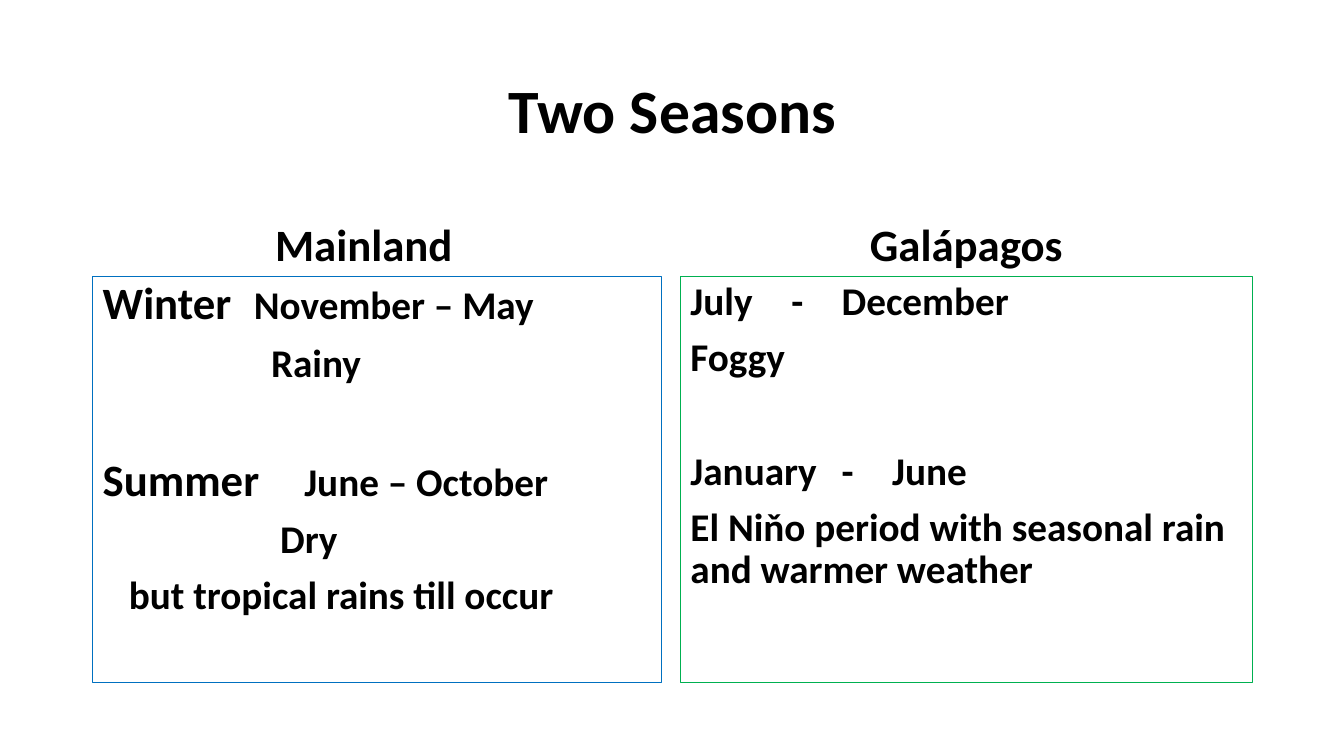
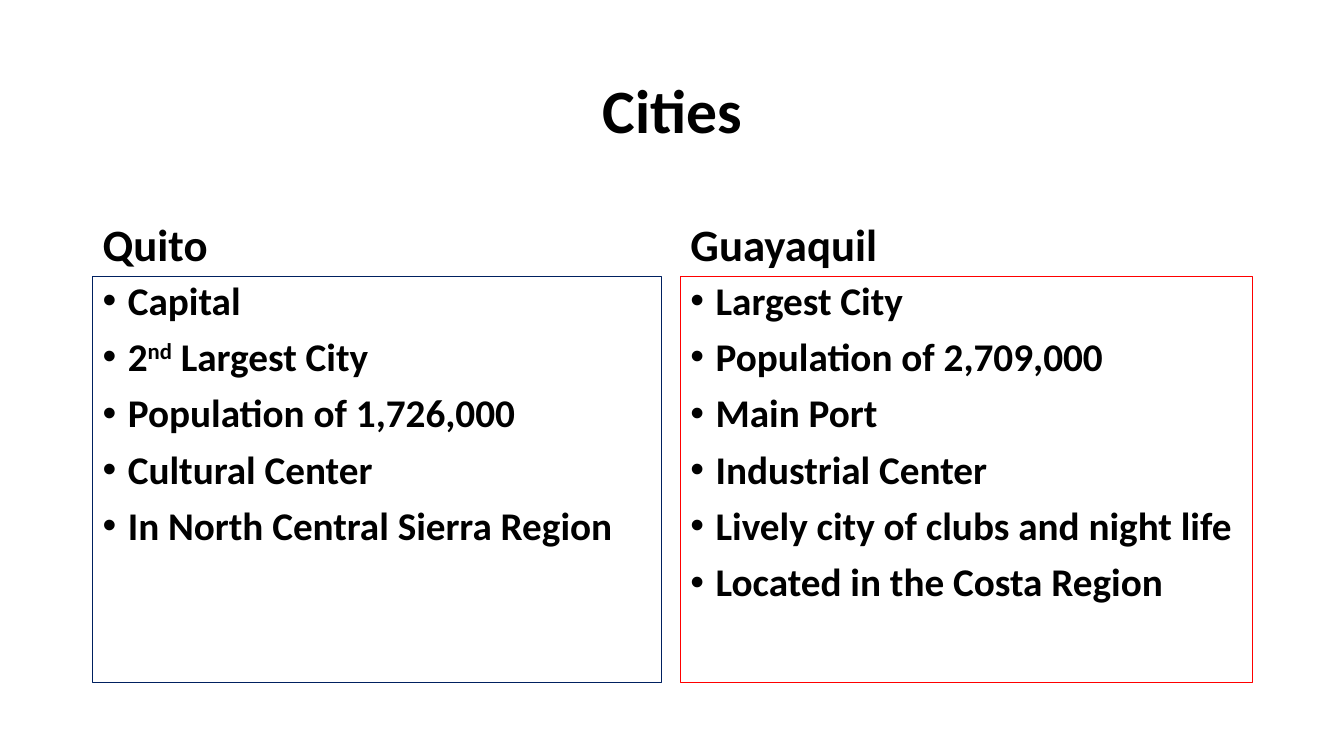
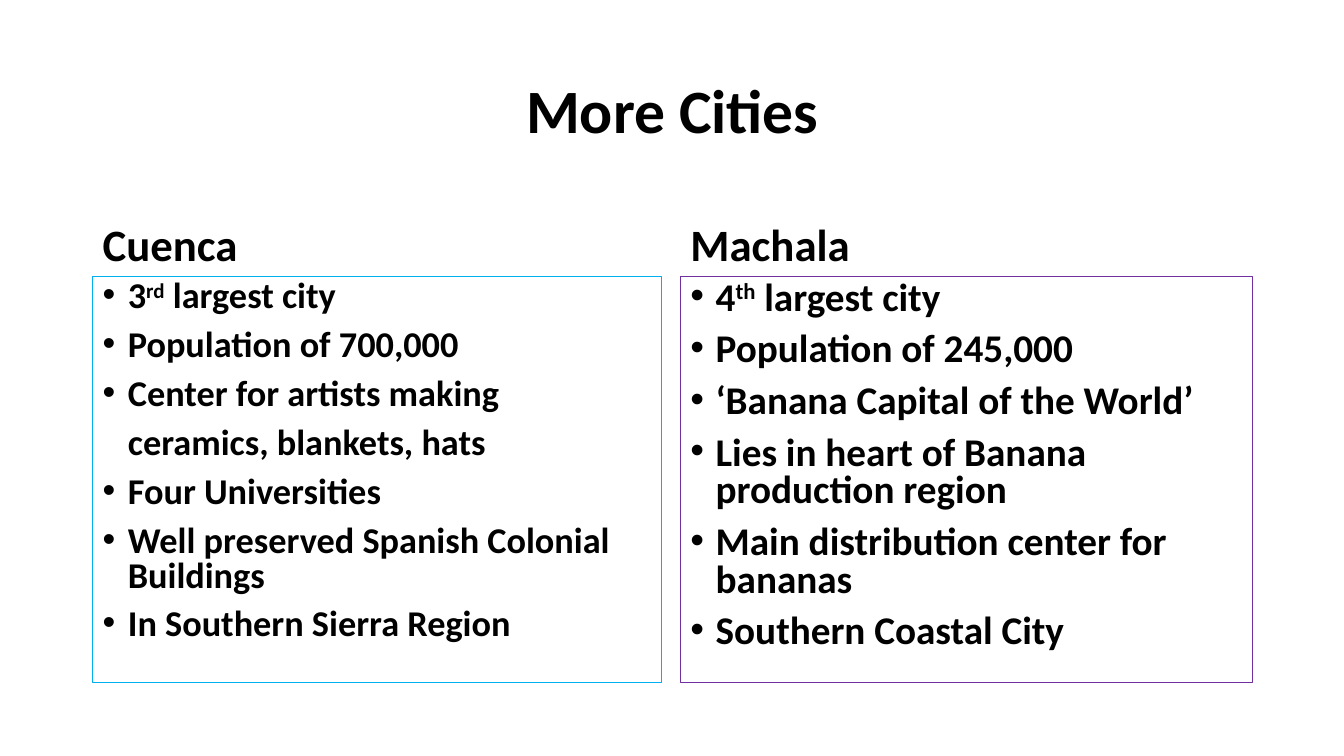
"""Build three two-column slides on the seasons and cities of Ecuador."""
from dataclasses import dataclass
from typing import Any

from lxml import etree
from pptx import Presentation
from pptx import util as u
from pptx.dml import color
from pptx.enum import shapes, text
from pptx.oxml import ns

HUES = {
    "ink": "000000", "blue": "0070C0", "green": "00B050", "navy": "002060",
    "red": "FF0000", "sky": "00B0F0", "plum": "7030A0",
}
FACE = "Calibri"
TITLE, HEAD, BODY = 44, 32, 28
GAP = 10
SKIP = 51
HANG = 0.25
LEFT, RIGHT = (0.92, 5.64), (6.75, 5.67)
INSET = 0.1


@dataclass(frozen=True)
class Line:
    text: str
    lead: str = ""
    indent: float = 0
    tabs: tuple[float, ...] = ()
    gap: float = GAP
    dot: bool = False


@dataclass(frozen=True)
class Panel:
    head: str
    hue: str
    lines: list[Line]
    size: float = BODY
    pitch: float = 0.9
    mid: bool = False
    inset: float = INSET


@dataclass(frozen=True)
class Page:
    title: str
    left: Panel
    right: Panel


def rgb(hue: str) -> color.RGBColor:
    """Return a named colour."""
    return color.RGBColor.from_string(HUES[hue])


def apply(item: Any, form: dict[str, Any]) -> None:
    """Set each format value on an object."""
    for name, value in form.items():
        setattr(item, name, value)


def add_run(para: Any, words: str, size: float, raised: bool = False) -> None:
    """Add a bold run, raised for ordinal endings."""
    run = para.add_run()
    run.text = words
    apply(run.font, {"name": FACE, "size": u.Pt(size), "bold": True})
    run.font.color.rgb = rgb("ink")
    if raised:
        run.font._element.set("baseline", "30000")


def set_frame(frame: Any, anchor: Any, inset: float = INSET) -> None:
    """Fix the wrapping, anchor and insets of a text frame."""
    apply(frame, {
        "word_wrap": True, "auto_size": text.MSO_AUTO_SIZE.NONE,
        "vertical_anchor": anchor,
        "margin_left": u.Inches(INSET), "margin_right": u.Inches(inset),
        "margin_top": u.Inches(0.05), "margin_bottom": u.Inches(0.05),
    })


def add_marks(para: Any, line: Line) -> None:
    """Set the indent, bullet and tab stops of a paragraph."""
    props = para._p.get_or_add_pPr()
    hang = HANG if line.dot else 0
    props.set("marL", str(u.Inches(line.indent + hang)))
    props.set("indent", str(u.Inches(-hang)))
    if line.dot:
        font = etree.SubElement(props, ns.qn("a:buFont"))
        font.set("typeface", "Arial")
        etree.SubElement(props, ns.qn("a:buChar")).set("char", "•")
    else:
        etree.SubElement(props, ns.qn("a:buNone"))
    if line.tabs:
        stops = etree.SubElement(props, ns.qn("a:tabLst"))
        for pos in line.tabs:
            stop = etree.SubElement(stops, ns.qn("a:tab"))
            stop.set("pos", str(u.Inches(pos)))
            stop.set("algn", "l")


def add_line(para: Any, line: Line, panel: Panel, first: bool) -> None:
    """Write one line, with text between carets raised."""
    add_marks(para, line)
    apply(para, {
        "alignment": text.PP_ALIGN.LEFT, "line_spacing": panel.pitch,
        "space_before": u.Pt(0 if first else line.gap),
    })
    if line.lead:
        add_run(para, line.lead, HEAD)
    for i, part in enumerate(line.text.split("^")):
        add_run(para, part, panel.size, raised=i % 2 == 1)


def add_panel(slide: Any, panel: Panel, span: tuple[float, float]) -> None:
    """Draw a heading over an outlined box of lines."""
    left, width = map(u.Inches, span)
    head = slide.shapes.add_textbox(left, u.Inches(1.84), width, u.Inches(0.9))
    set_frame(head.text_frame, text.MSO_ANCHOR.BOTTOM, panel.inset)
    para = head.text_frame.paragraphs[0]
    align = text.PP_ALIGN.CENTER if panel.mid else text.PP_ALIGN.LEFT
    apply(para, {"alignment": align, "line_spacing": 0.9})
    add_run(para, panel.head, HEAD)

    box = slide.shapes.add_shape(
        shapes.MSO_SHAPE.RECTANGLE, left, u.Inches(2.74), width, u.Inches(4.03))
    box.shadow.inherit = False
    box.fill.background()
    box.line.color.rgb = rgb(panel.hue)
    box.line.width = u.Pt(0.75)
    frame = box.text_frame
    set_frame(frame, text.MSO_ANCHOR.TOP)
    for i, line in enumerate(panel.lines):
        para = frame.add_paragraph() if i else frame.paragraphs[0]
        add_line(para, line, panel, first=i == 0)


def add_page(deck: Any, page: Page) -> None:
    """Add a titled slide with two panels."""
    slide = deck.slides.add_slide(deck.slide_layouts[5])
    title = slide.shapes.title
    apply(title, {
        "left": u.Inches(0.92), "top": u.Inches(0.4),
        "width": u.Inches(11.5), "height": u.Inches(1.45),
    })
    set_frame(title.text_frame, text.MSO_ANCHOR.MIDDLE)
    para = title.text_frame.paragraphs[0]
    apply(para, {"alignment": text.PP_ALIGN.CENTER, "line_spacing": 0.9})
    add_run(para, page.title, TITLE)
    add_panel(slide, page.left, LEFT)
    add_panel(slide, page.right, RIGHT)


def dots(*items: str) -> list[Line]:
    """Make bulleted lines."""
    return [Line(item, dot=True) for item in items]


PAGES = [
    Page(
        "Two Seasons",
        Panel("Mainland", "blue", [
            Line("\tNovember – May", lead="Winter", tabs=(1.9,)),
            Line("Rainy", indent=1.67),
            Line("\tJune – October", lead="Summer", tabs=(1.9,), gap=SKIP),
            Line("Dry", indent=1.76),
            Line("but tropical rains till occur", indent=0.26),
        ], mid=True, inset=0.36),
        Panel("Galápagos", "green", [
            Line("July\t-\tDecember", tabs=(0.79, 1.09)),
            Line("Foggy"),
            Line("January\t-\tJune", tabs=(1.43, 1.72), gap=SKIP),
            Line("El Niňo period with seasonal rain and warmer weather"),
        ], mid=True),
    ),
    Page(
        "Cities",
        Panel("Quito", "navy", dots(
            "Capital", "2^nd^ Largest City", "Population of 1,726,000",
            "Cultural Center", "In North Central Sierra Region")),
        Panel("Guayaquil", "red", dots(
            "Largest City", "Population of 2,709,000", "Main Port",
            "Industrial Center", "Lively city of clubs and night life",
            "Located in the Costa Region")),
    ),
    Page(
        "More Cities",
        Panel("Cuenca", "sky", [
            *dots("3^rd^ largest city", "Population of 700,000",
                  "Center for artists making"),
            Line("ceramics, blankets, hats", indent=HANG),
            *dots("Four Universities",
                  "Well preserved Spanish Colonial Buildings",
                  "In Southern Sierra Region"),
        ], size=25.9, pitch=0.8),
        Panel("Machala", "plum", dots(
            "4^th^ largest city", "Population of 245,000",
            "‘Banana Capital of the World’",
            "Lies in heart of Banana production region",
            "Main distribution center for bananas",
            "Southern Coastal City"), pitch=0.8),
    ),
]


def main() -> None:
    """Build and save the deck."""
    deck = Presentation()
    apply(deck, {"slide_width": u.Inches(13.33), "slide_height": u.Inches(7.5)})
    for page in PAGES:
        add_page(deck, page)
    deck.save("out.pptx")


if __name__ == "__main__":
    main()
